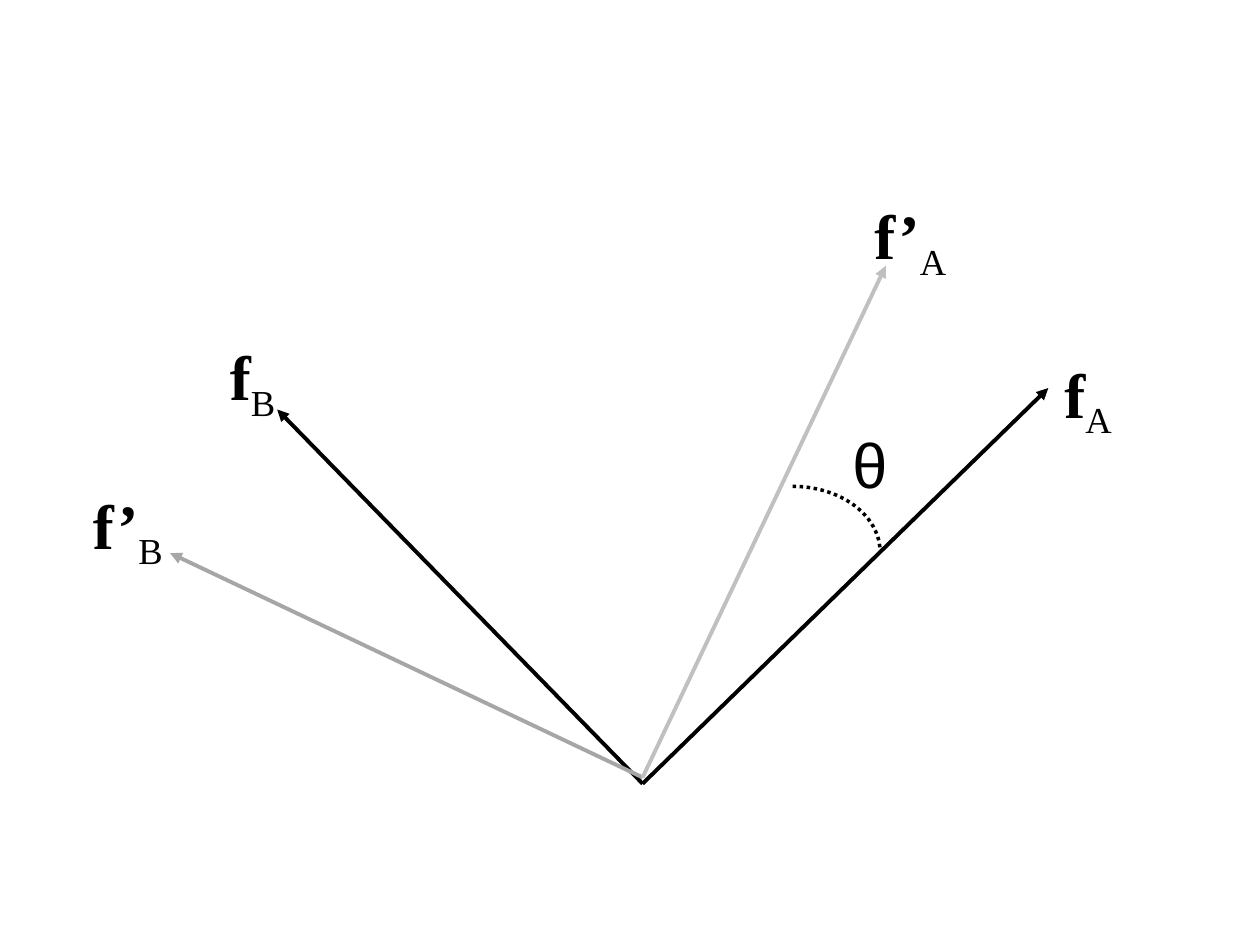
from math import cos, pi, sin

from lxml import etree
from pptx import Presentation
from pptx.dml.color import RGBColor
from pptx.enum.dml import MSO_LINE
from pptx.enum.shapes import MSO_CONNECTOR
from pptx.enum.text import MSO_ANCHOR, PP_ALIGN
from pptx.oxml.ns import qn
from pptx.util import Inches, Pt

BLACK = RGBColor(0x00, 0x00, 0x00)
GREY = RGBColor(0xA6, 0xA6, 0xA6)
LIGHT_GREY = RGBColor(0xC0, 0xC0, 0xC0)
STRAIGHT = MSO_CONNECTOR.STRAIGHT
DOTTED = MSO_LINE.ROUND_DOT
MIDDLE = MSO_ANCHOR.MIDDLE
CENTER = PP_ALIGN.CENTER

COLUMNS, ROWS = 100, 75
WIDTH, HEIGHT = Inches(10), Inches(7.5)


class VectorDiagram:
    """Draws grouped vectors, labels and arcs on a 100 by 75 grid."""

    serif, sans = "Times New Roman", "Arial"
    text_size = Pt(36)
    vector_width, arc_width = Pt(2.25), Pt(2)
    label_columns, label_rows = 8.7, 10.4
    arc_steps = 24

    def __init__(self, page):
        self.shapes = page.shapes.add_group_shape().shapes

    def place(self, column, row):
        return round(WIDTH * column / COLUMNS), round(HEIGHT * row / ROWS)

    def vector(self, tip, origin, color):
        arrow = self.shapes.add_connector(
            STRAIGHT, *self.place(*tip), *self.place(*origin))
        arrow.line.color.rgb = color
        arrow.line.width = self.vector_width
        properties = arrow._element.spPr
        head = etree.SubElement(properties.find(qn("a:ln")), qn("a:headEnd"))
        head.set("type", "triangle")
        etree.SubElement(properties, qn("a:effectLst"))

    def label(self, corner, symbol, subscript=""):
        """Write a bold serif symbol with its subscript, or a plain sans symbol."""
        box = self.shapes.add_textbox(
            *self.place(*corner),
            *self.place(self.label_columns, self.label_rows))
        frame = box.text_frame
        frame.word_wrap = True
        frame.vertical_anchor = MIDDLE
        para = frame.paragraphs[0]
        para.alignment = CENTER
        for text in filter(None, (symbol, subscript)):
            span = para.add_run()
            span.text = text
            span.font.size = self.text_size
            span.font.name = self.serif if subscript else self.sans
            span.font.color.rgb = BLACK
            span.font.bold = bool(subscript) and text == symbol
        if subscript:
            span.font._element.set("baseline", "-25000")

    def quarter_arc(self, center, radii):
        """Draw a dotted arc clockwise from the top of an ellipse to its right."""
        angles = [pi / 2 * step / self.arc_steps
                  for step in range(self.arc_steps + 1)]
        points = [self.place(center[0] + radii[0] * sin(angle),
                             center[1] - radii[1] * cos(angle))
                  for angle in angles]
        builder = self.shapes.build_freeform(*points[0])
        builder.add_line_segments(points[1:], close=False)
        arc = builder.convert_to_shape()
        arc.shadow.inherit = False
        arc.fill.background()
        arc.line.color.rgb = BLACK
        arc.line.width = self.arc_width
        arc.line.dash_style = DOTTED


def main():
    deck = Presentation()
    deck.slide_width, deck.slide_height = WIDTH, HEIGHT
    diagram = VectorDiagram(deck.slides.add_slide(deck.slide_layouts[6]))

    origin, rotated_origin = (51, 62.2), (51, 61.7)
    diagram.vector((22, 32.5), origin, BLACK)
    diagram.vector((83.2, 30.8), origin, BLACK)
    diagram.vector((13.5, 43.9), rotated_origin, GREY)
    diagram.vector((70.3, 21.1), rotated_origin, LIGHT_GREY)

    diagram.label((15.7, 25), "f", "B")
    diagram.quarter_arc(center=(62.9, 43.8), radii=(6.95, 5.2))
    diagram.label((82, 26.4), "f", "A")
    diagram.label((5.8, 36.8), "f’", "B")
    diagram.label((67.9, 13.8), "f’", "A")
    diagram.label((64.7, 31.6), "θ")

    deck.save("out.pptx")


if __name__ == "__main__":
    main()
